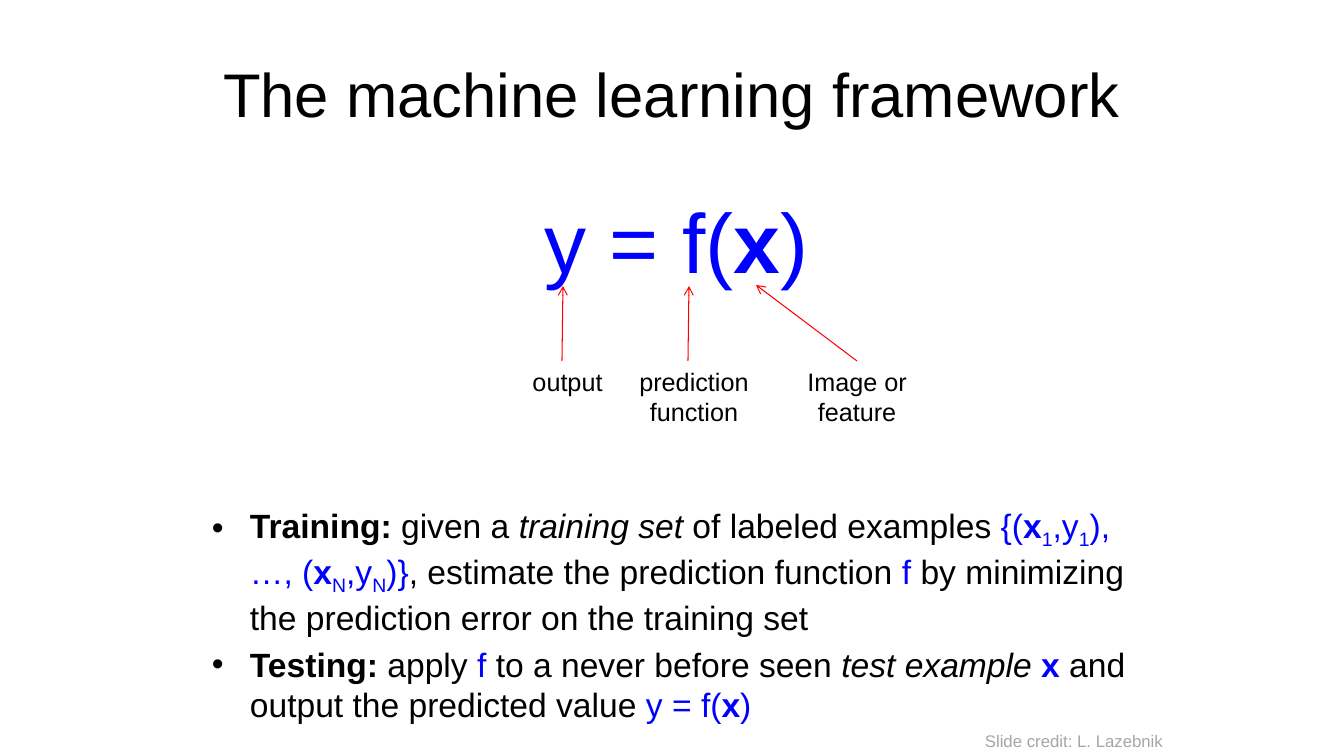
from dataclasses import dataclass

from pptx import Presentation
from pptx.dml.color import RGBColor as Color
from pptx.enum.shapes import MSO_CONNECTOR as Connector
from pptx.enum.text import MSO_ANCHOR as Anchor, PP_ALIGN as Align
from pptx.oxml.ns import qn
from pptx.util import Emu, Pt
from lxml.etree import SubElement

EMU_PER_PX = 914400 / 100.8


def px(length):
    return Emu(round(length * EMU_PER_PX))


@dataclass(frozen=True)
class Theme:
    font: str = "Arial"
    text: Color = Color(0, 0, 0)
    math: Color = Color(0, 0, 255)
    arrow: Color = Color(255, 0, 0)
    credit: Color = Color(166, 166, 166)
    title_size: int = 44
    formula_size: int = 60
    body_size: int = 24
    label_size: int = 18
    credit_size: int = 12


class FrameworkSlide:
    def __init__(self, deck, theme):
        self.theme = theme
        self.page = deck.slides.add_slide(deck.slide_layouts[6])

    def text(self, area, paragraphs, size, color=None, align=Align.LEFT,
             anchor=Anchor.TOP, wrap=True, bullets=False):
        box = self.page.shapes.add_textbox(*map(px, area))
        frame = box.text_frame
        for name, value in {"word_wrap": wrap, "vertical_anchor": anchor}.items():
            setattr(frame, name, value)
        for index, spans in enumerate(paragraphs):
            para = frame.add_paragraph() if index else frame.paragraphs[0]
            para.alignment = align
            if index:
                para.space_before = Pt(size * 0.2)
            if bullets:
                self.bullet(para)
            for words, marks in spans:
                self.span(para, words, marks, size, color or self.theme.text)
        return box

    def bullet(self, para):
        properties = para._p.get_or_add_pPr()
        properties.set("marL", str(px(38)))
        properties.set("indent", str(px(-38)))
        SubElement(properties, qn("a:buFont"), typeface=self.theme.font)
        SubElement(properties, qn("a:buChar"), char="•")

    def span(self, para, words, marks, size, color):
        span = para.add_run()
        span.text = words
        style = {"name": self.theme.font, "size": Pt(size),
                 "bold": "b" in marks, "italic": "i" in marks}
        for name, value in style.items():
            setattr(span.font, name, value)
        span.font.color.rgb = self.theme.math if "m" in marks else color
        if "s" in marks:
            span._r.get_or_add_rPr().set("baseline", "-25000")

    def arrow(self, start, end, source=None):
        line = self.page.shapes.add_connector(
            Connector.STRAIGHT, *map(px, (*start, *end)))
        if source is not None:
            line.begin_connect(source, 0)
        line.line.color.rgb = self.theme.arrow
        line.line.width = Pt(0.75)
        SubElement(line.line._get_or_add_ln(), qn("a:tailEnd"), type="arrow")
        SubElement(line._element.spPr, qn("a:effectLst"))


FORMULA = [("y = f(", "m"), ("x", "mb"), (")", "m")]

TRAINING = [
    ("Training: ", "b"), ("given a ", ""), ("training set ", "i"),
    ("of labeled examples ", ""), ("{(", "m"),
    ("x", "mb"), ("1", "ms"), (",y", "m"), ("1", "ms"), ("), …, (", "m"),
    ("x", "mb"), ("N", "ms"), (",y", "m"), ("N", "ms"), (")}", "m"),
    (", estimate the prediction function ", ""), ("f ", "m"),
    ("by minimizing the prediction error on the training set", ""),
]

TESTING = [
    ("Testing:", "b"), (" apply ", ""), ("f", "m"),
    (" to a never before seen ", ""), ("test example ", "i"), ("x", "mb"),
    (" and output the predicted value ", ""), *FORMULA,
]

LABELS = [
    ("output", (522, 361, 91, 40), False, (562, 361), (563, 286), False),
    ("prediction function", (590, 361, 208, 72), True, (688, 361), (689, 286), False),
    ("Image or feature", (774, 361, 166, 72), True, (857, 361), (756, 285), True),
]


def main():
    deck = Presentation()
    deck.slide_width, deck.slide_height = px(1344), px(756)
    theme = Theme()
    slide = FrameworkSlide(deck, theme)

    slide.text((67, 30, 1210, 126), [[("The machine learning framework", "")]],
               theme.title_size, align=Align.CENTER, anchor=Anchor.MIDDLE)
    slide.text((202, 185, 949, 107), [FORMULA], theme.formula_size,
               align=Align.CENTER)
    slide.text((202, 500, 949, 225), [TRAINING, TESTING], theme.body_size,
               bullets=True)

    for words, area, wrap, start, end, joined in LABELS:
        label = slide.text(area, [[(words, "")]], theme.label_size,
                           align=Align.CENTER, wrap=wrap)
        slide.arrow(start, end, label if joined else None)

    slide.text((975, 726, 200, 30), [[("Slide credit: L. Lazebnik", "")]],
               theme.credit_size, color=theme.credit, wrap=False)
    deck.save("out.pptx")


if __name__ == "__main__":
    main()
